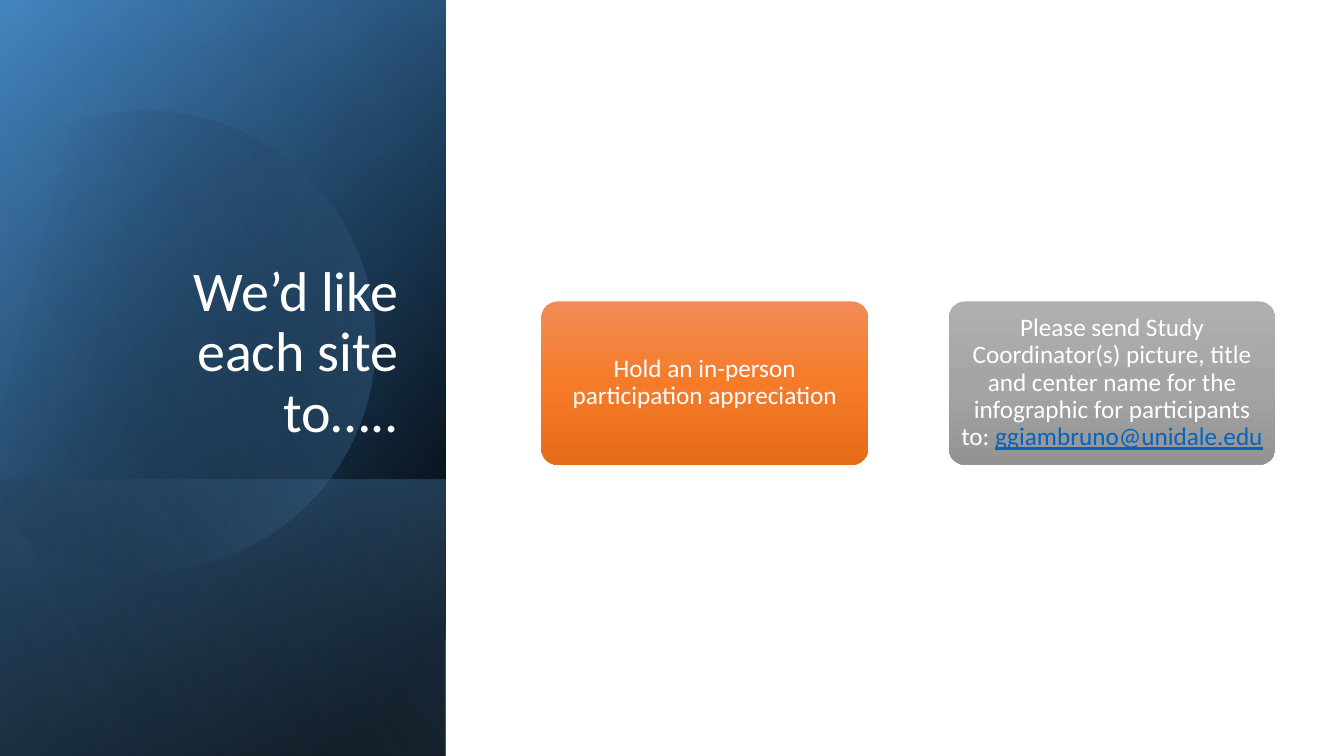
import math
from lxml import etree
from pptx import Presentation
from pptx.dml import color
from pptx.enum import shapes, text
from pptx.oxml import ns
from pptx.util import Inches, Pt

FONT = "Calibri"
DISC_ROTATION = 343.9
DISC_CENTER = (1.58, 3.34)
DISC_START = (1.49, 1.1)
DISC_CURVES = [
    [(2.46, 1.12), (3.35, 1.77), (3.63, 2.75)],
    [(3.98, 3.97), (3.28, 5.23), (2.07, 5.58)],
    [(1.31, 5.8), (0.53, 5.61), (-0.03, 5.14)],
    [(-0.15, 5.03)],
    [(-0.15, 1.75)],
    [(0, 1.61)],
    [(0.23, 1.42), (0.5, 1.28), (0.8, 1.19)],
    [(1.03, 1.13), (1.26, 1.1), (1.49, 1.1)],
]
EMAIL = "ggiambruno@unidale.edu"
CARDS = [
    ([("Hold an in-person participation appreciation", "FFFFFF")],
     ["F18C57", "F67B28", "E56C19"]),
    ([("Please send Study Coordinator(s) picture, title and center name "
       "for the infographic for participants to: ", "FFFFFF"), (EMAIL, "0563C1")],
     ["AFAFAF", "A5A5A5", "939393"]),
]


def rgb(value):
    return color.RGBColor.from_string(value)


def paint_gradient(shape, stops, angle):
    shape.shadow.inherit = False
    shape.line.fill.background()
    shape.fill.gradient()
    shape.fill.gradient_angle = 360 - angle
    stop_list = shape._element.spPr.find(".//" + ns.qn("a:gsLst"))
    for old_stop in list(stop_list):
        stop_list.remove(old_stop)
    for position, value, opacity in stops:
        stop = etree.SubElement(stop_list, ns.qn("a:gs"), pos=str(position * 1000))
        fill = etree.SubElement(stop, ns.qn("a:srgbClr"), val=value)
        if opacity < 100:
            etree.SubElement(fill, ns.qn("a:alpha"), val=str(opacity * 1000))


def format_run(run, size, value):
    run.font.name = FONT
    run.font.size = Pt(size)
    run.font.color.rgb = rgb(value)


def add_turned_panel(slide, left, top, width, height, stops, angle):
    shape = slide.shapes.add_shape(
        shapes.MSO_SHAPE.RECTANGLE,
        Inches(left + (width - height) / 2), Inches(top + (height - width) / 2),
        Inches(height), Inches(width))
    shape.rotation = 90
    shape._element.spPr.find(ns.qn("a:xfrm")).set("flipH", "1")
    paint_gradient(shape, stops, angle)


def curve_points(start, curve, steps=24):
    if len(curve) == 1:
        return curve
    weights = [(math.comb(3, k), k) for k in range(4)]
    controls = [start] + curve
    return [tuple(sum(c * (1 - t) ** (3 - k) * t ** k * controls[k][axis]
                      for c, k in weights) for axis in (0, 1))
            for t in (step / steps for step in range(1, steps + 1))]


def add_disc(slide, left, top):
    points = [DISC_START]
    for curve in DISC_CURVES:
        points += curve_points(points[-1], curve)
    turn = math.radians(-DISC_ROTATION)
    center_x, center_y = DISC_CENTER
    level = []
    for x, y in points:
        dx, dy = x - center_x, y - center_y
        level.append((
            Inches(left + center_x + dx * math.cos(turn) - dy * math.sin(turn)),
            Inches(top + center_y + dx * math.sin(turn) + dy * math.cos(turn))))
    builder = slide.shapes.build_freeform(*level[0])
    builder.add_line_segments(level[1:], close=True)
    disc = builder.convert_to_shape()
    disc.rotation = DISC_ROTATION
    paint_gradient(disc, [(29, "000000", 0), (100, "5B9BD5", 43)], 30)


def add_title(slide, left, top, width, height):
    title = slide.shapes.title
    title.left, title.top = Inches(left), Inches(top)
    title.width, title.height = Inches(width), Inches(height)
    frame = title.text_frame
    frame.text = "We’d like each site to….."
    frame.word_wrap = True
    frame.auto_size = text.MSO_AUTO_SIZE.NONE
    frame.vertical_anchor = text.MSO_ANCHOR.BOTTOM
    paragraph = frame.paragraphs[0]
    paragraph.alignment = text.PP_ALIGN.RIGHT
    paragraph.line_spacing = 0.9
    format_run(paragraph.runs[0], 40, "FFFFFF")


def add_side_panel(slide, left, top, width, height):
    box = (left, top, width, height)
    add_turned_panel(slide, *box, [(8, "000000", 100), (100, "2E75B6", 100)], 50)
    add_turned_panel(slide, *box, [(0, "000000", 0), (99, "5B9BD5", 46)], 30)
    band = 2.74
    add_turned_panel(slide, left, top + height - band, width, band,
                     [(2, "5B9BD5", 29), (100, "000000", 30)], 130)
    add_disc(slide, left, top)
    add_turned_panel(slide, *box, [(0, "000000", 0), (99, "9DC3E6", 11)], 120)
    add_title(slide, left + 0.64, top + 1.84, 3.41, 2.62)


def add_card(slide, left, top, width, height, pieces, shades):
    card = slide.shapes.add_shape(
        shapes.MSO_SHAPE.ROUNDED_RECTANGLE,
        Inches(left), Inches(top), Inches(width), Inches(height))
    card.adjustments[0] = 0.1
    paint_gradient(card, [(50 * i, shade, 100) for i, shade in enumerate(shades)], 90)
    frame = card.text_frame
    frame.word_wrap = True
    frame.vertical_anchor = text.MSO_ANCHOR.MIDDLE
    frame.margin_left = frame.margin_right = Inches(0.04)
    frame.margin_top = frame.margin_bottom = Inches(0.03)
    paragraph = frame.paragraphs[0]
    paragraph.alignment = text.PP_ALIGN.CENTER
    paragraph.line_spacing = 0.9
    for wording, value in pieces:
        run = paragraph.add_run()
        run.text = wording
        format_run(run, 18, value)
        if wording == EMAIL:
            run.font.underline = True


def add_cards(slide, left, top, width, height):
    card_width = 3.24
    step = (width - card_width) / (len(CARDS) - 1)
    for index, (pieces, shades) in enumerate(CARDS):
        add_card(slide, left + index * step, top, card_width, height, pieces, shades)


def main():
    presentation = Presentation()
    presentation.slide_width = Inches(13.33)
    presentation.slide_height = Inches(7.5)
    slide = presentation.slides.add_slide(presentation.slide_layouts[5])
    slide.background.fill.solid()
    slide.background.fill.fore_color.rgb = rgb("FFFFFF")
    title_element = slide.shapes.title._element
    add_side_panel(slide, 0, 0, 4.42, 7.5)
    slide.shapes._spTree.append(title_element)
    add_cards(slide, 5.37, 2.99, 7.28, 1.62)
    presentation.save("out.pptx")


if __name__ == "__main__":
    main()
